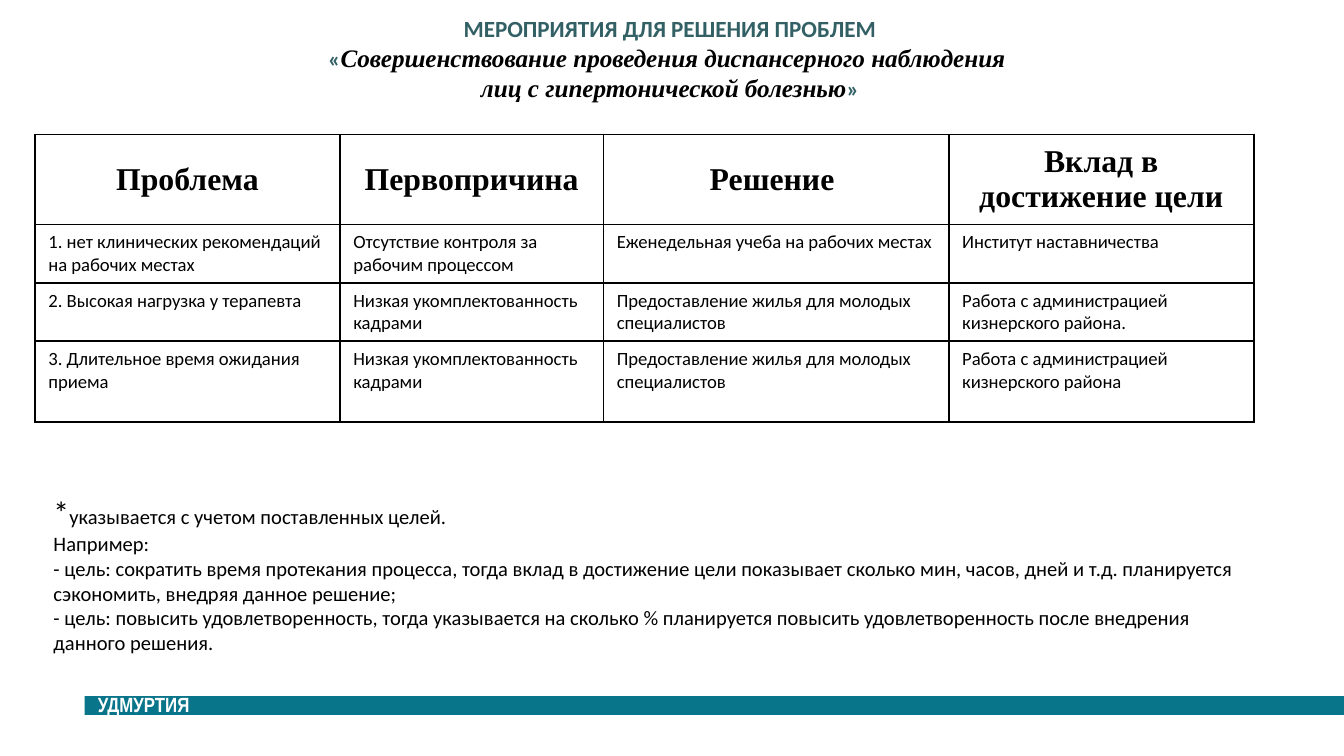
from lxml import etree
from pptx import Presentation
from pptx.dml.color import RGBColor
from pptx.enum.shapes import MSO_SHAPE
from pptx.enum.text import MSO_ANCHOR, MSO_AUTO_SIZE, PP_ALIGN
from pptx.oxml.ns import qn
from pptx.util import Inches, Pt

RECTANGLE = MSO_SHAPE.RECTANGLE
TOP, MIDDLE = MSO_ANCHOR.TOP, MSO_ANCHOR.MIDDLE
LEFT, CENTER = PP_ALIGN.LEFT, PP_ALIGN.CENTER
NO_AUTOFIT = MSO_AUTO_SIZE.NONE
BLACK, WHITE, TEAL, HEADING = "000000", "FFFFFF", "09758A", "326065"
SANS, SERIF, NARROW = "Calibri", "Times New Roman", "Arial Narrow"

SLIDE_WIDTH = 10
SLIDE_HEIGHT = SLIDE_WIDTH * 9 / 16
COLUMN_WIDTHS = [2.27, 1.96, 2.57, 2.27]
ROW_HEIGHTS = [0.67, 0.43, 0.43, 0.6]
HOUSING = "Предоставление жилья для молодых специалистов"
STAFFING = "Низкая укомплектованность кадрами"
MEASURES = [
    ["Проблема", "Первопричина", "Решение ", "Вклад в достижение цели"],
    ["1. нет клинических рекомендаций на рабочих местах",
     "Отсутствие контроля за рабочим процессом",
     "Еженедельная учеба на рабочих местах", "Институт наставничества"],
    ["2. Высокая нагрузка у терапевта", STAFFING, HOUSING,
     "Работа с администрацией кизнерского района."],
    ["3. Длительное время ожидания приема", STAFFING, HOUSING,
     "Работа с администрацией кизнерского района"],
]
NOTES = [
    "Например:",
    "- цель: сократить время протекания процесса, тогда вклад в достижение цели "
    "показывает сколько мин, часов, дней и т.д. планируется сэкономить, "
    "внедряя данное решение;",
    "- цель: повысить удовлетворенность, тогда указывается на сколько % планируется "
    "повысить удовлетворенность после внедрения данного решения.",
]


def color(value):
    """Turn a hex string into a colour."""
    return RGBColor.from_string(value)


def add_span(para, text, size, font=SANS, tint=BLACK, bold=False, italic=False):
    """Add one formatted run to a paragraph."""
    span = para.add_run()
    span.text = text
    span.font.size = Pt(size)
    span.font.name = font
    span.font.bold = bold
    span.font.italic = italic
    span.font.color.rgb = color(tint)


def place(shape, left, top, width, height):
    """Move and size a shape in inches."""
    shape.left, shape.top = Inches(left), Inches(top)
    shape.width, shape.height = Inches(width), Inches(height)


def add_title(page, left, top, width, height):
    """Fill the title placeholder with the heading and the project name."""
    title = page.shapes.title
    place(title, left, top, width, height)
    frame = title.text_frame
    frame.auto_size = NO_AUTOFIT
    frame.word_wrap = True
    frame.vertical_anchor = TOP
    heading, project = frame.paragraphs[0], frame.add_paragraph()
    for para in (heading, project):
        para.alignment = CENTER
    add_span(heading, "МЕРОПРИЯТИЯ ДЛЯ РЕШЕНИЯ ПРОБЛЕМ", 12.4, tint=HEADING, bold=True)
    add_span(project, "«", 12.4, tint=HEADING, bold=True)
    add_span(project, "Совершенствование проведения диспансерного наблюдения ",
             13.5, SERIF, bold=True, italic=True)
    project.add_line_break()
    add_span(project, "лиц с гипертонической болезнью", 13.5, SERIF, bold=True, italic=True)
    add_span(project, "»", 12.4, tint=HEADING, bold=True)


def outline_cell(cell):
    """Draw a one-point black border on all sides of a cell."""
    properties = cell._tc.get_or_add_tcPr()
    for index, side in enumerate(("a:lnL", "a:lnR", "a:lnT", "a:lnB")):
        line = etree.Element(qn(side), w=str(Pt(1)))
        fill = etree.SubElement(line, qn("a:solidFill"))
        etree.SubElement(fill, qn("a:srgbClr"), val=BLACK)
        properties.insert(index, line)


def add_measures(page, left, top):
    """Add the table of problems, causes, solutions and contributions."""
    frame = page.shapes.add_table(
        len(ROW_HEIGHTS), len(COLUMN_WIDTHS), Inches(left), Inches(top),
        Inches(sum(COLUMN_WIDTHS)), Inches(sum(ROW_HEIGHTS)))
    table = frame.table
    table.first_row = table.horz_banding = False
    for column, width in zip(table.columns, COLUMN_WIDTHS):
        column.width = Inches(width)
    for index, (row, height, texts) in enumerate(zip(table.rows, ROW_HEIGHTS, MEASURES)):
        row.height = Inches(height)
        header = index == 0
        for cell, text in zip(row.cells, texts):
            cell.fill.solid()
            cell.fill.fore_color.rgb = color(WHITE)
            outline_cell(cell)
            cell.vertical_anchor = MIDDLE if header else TOP
            para = cell.text_frame.paragraphs[0]
            para.alignment = CENTER if header else LEFT
            if header:
                add_span(para, text, 17, SERIF, bold=True)
            else:
                add_span(para, text, 10)


def add_notes(page, left, top, width, height):
    """Add the footnote explaining how to state the contribution."""
    box = page.shapes.add_textbox(Inches(left), Inches(top), Inches(width), Inches(height))
    frame = box.text_frame
    frame.word_wrap = True
    para = frame.paragraphs[0]
    add_span(para, "*", 17)
    add_span(para, "указывается с учетом поставленных целей.", 11)
    for text in NOTES:
        add_span(frame.add_paragraph(), text, 11)


def add_footer(page, left, top, width, height):
    """Add the coloured bar with the region name."""
    bar = page.shapes.add_shape(
        RECTANGLE, Inches(left), Inches(top), Inches(width), Inches(height))
    bar.shadow.inherit = False
    bar.fill.solid()
    bar.fill.fore_color.rgb = color(TEAL)
    bar.line.fill.background()
    bar.text_frame.vertical_anchor = MIDDLE
    para = bar.text_frame.paragraphs[0]
    para.alignment = LEFT
    para.line_spacing = 0.9
    add_span(para, "УДМУРТИЯ", 11, NARROW, WHITE, bold=True)


def main():
    """Build and save the slide."""
    deck = Presentation()
    deck.slide_width, deck.slide_height = Inches(SLIDE_WIDTH), Inches(SLIDE_HEIGHT)
    page = deck.slides.add_slide(deck.slide_layouts.get_by_name("Title Only"))
    add_footer(page, 0.63, 5.18, 9.37, 0.14)
    add_title(page, 0.08, 0.06, 9.81, 0.71)
    add_notes(page, 0.3, 3.62, 9.17, 1.31)
    add_measures(page, 0.26, 1)
    deck.save("out.pptx")


if __name__ == "__main__":
    main()
